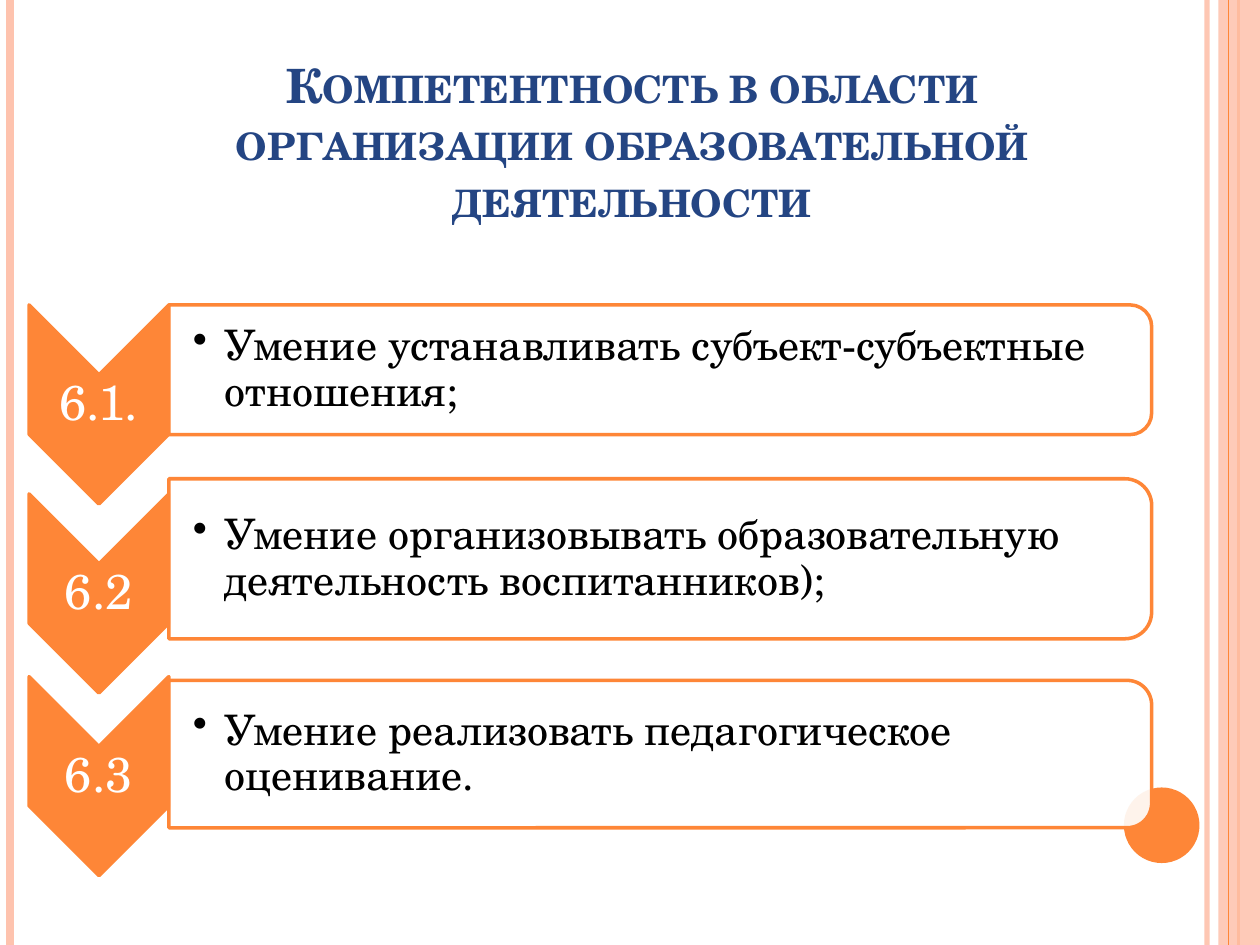
from dataclasses import dataclass

from lxml import etree
from pptx import Presentation
from pptx.dml.color import RGBColor
from pptx.enum.shapes import MSO_CONNECTOR as CONN, MSO_SHAPE as SHAPE
from pptx.enum.text import MSO_ANCHOR as ANCHOR, MSO_AUTO_SIZE as AUTO, PP_ALIGN as ALIGN
from pptx.oxml.ns import qn
from pptx.util import Inches, Pt


@dataclass(frozen=True)
class Theme:
    font: str = "TeX Gyre Schola"
    accent: str = "FE8637"
    pale: str = "FEC3AE"
    title: str = "244583"
    body: str = "000000"
    white: str = "FFFFFF"
    title_pt: int = 27
    label_pt: int = 28
    body_pt: int = 24
    border_pt: int = 2


THEME = Theme()


def set_alpha(fill, percent):
    """Make a solid fill partly transparent."""
    color = fill._xPr.find(qn("a:solidFill"))[0]
    etree.SubElement(color, qn("a:alpha"), val=str(percent * 1000))


def set_text(sp, text, size, color, bold=False, small_caps=False, bullet=False,
             align=ALIGN.CENTER, anchor=ANCHOR.MIDDLE, spacing=0.9, inset=0.02, left=0.02):
    tf = sp.text_frame
    tf.word_wrap, tf.auto_size, tf.vertical_anchor = True, AUTO.NONE, anchor
    tf.margin_left = Inches(left)
    tf.margin_right = tf.margin_top = tf.margin_bottom = Inches(inset)
    p = tf.paragraphs[0]
    p.alignment, p.line_spacing = align, spacing
    if bullet:
        pPr = p._p.get_or_add_pPr()
        pPr.set("marL", str(Inches(0.25)))
        pPr.set("indent", str(-Inches(0.25)))
        etree.SubElement(pPr, qn("a:buChar"), char="•")
    r = p.add_run()
    r.text = text
    r.font.name, r.font.size, r.font.bold = THEME.font, Pt(size), bold
    r.font.color.rgb = RGBColor.from_string(color)
    if small_caps:
        r._r.get_or_add_rPr().set("cap", "small")


def add_shape(slide, kind, x, y, w, h, fill, alpha=100, border=None, turned=False):
    """Place a shape in the visible box; a turned shape is rotated by 90 degrees."""
    if turned:
        x, y, w, h = x + (w - h) / 2, y + (h - w) / 2, h, w
    sp = slide.shapes.add_shape(kind, Inches(x), Inches(y), Inches(w), Inches(h))
    sp.rotation = 90 if turned else 0
    sp.shadow.inherit = False
    sp.fill.solid()
    sp.fill.fore_color.rgb = RGBColor.from_string(fill)
    if alpha < 100:
        set_alpha(sp.fill, alpha)
    if border:
        sp.line.color.rgb = RGBColor.from_string(border)
        sp.line.width = Pt(THEME.border_pt)
    else:
        sp.line.fill.background()
    return sp


def add_stripe(slide, x, height, color, width, alpha=100):
    line = slide.shapes.add_connector(CONN.STRAIGHT, Inches(x), 0, Inches(x), Inches(height))
    line.line.color.rgb = RGBColor.from_string(color)
    line.line.width = Pt(width)
    if alpha < 100:
        set_alpha(line.line.fill, alpha)
    etree.SubElement(line._element.spPr, qn("a:effectLst"))


def add_frame(slide, width, height):
    """Edge stripes, right band and corner disc."""
    add_stripe(slide, width - 0.42, height, THEME.pale, 3, alpha=93)
    add_stripe(slide, 0.08, height, THEME.pale, 4.5)
    add_stripe(slide, width - 0.17, height, THEME.accent, 1.5)
    add_shape(slide, SHAPE.RECTANGLE, width - 0.33, 0, 0.33, height, THEME.pale, alpha=87)
    add_stripe(slide, width - 0.25, height, THEME.accent, 0.75)
    add_shape(slide, SHAPE.OVAL, width - 1.08, height - 1.25, 0.6, 0.6, THEME.accent)


def add_title(slide, text, x, y, w, h):
    title = slide.shapes.title
    title.left, title.top, title.width, title.height = map(Inches, (x, y, w, h))
    set_text(title, text, THEME.title_pt, THEME.title, bold=True, small_caps=True,
             anchor=ANCHOR.BOTTOM, spacing=1.0, inset=0.05, left=0.1)


def add_text_box(slide, text, x, y, w, h, size, color, **fmt):
    box = slide.shapes.add_textbox(Inches(x), Inches(y), Inches(w), Inches(h))
    set_text(box, text, size, color, **fmt)


def add_chevron(slide, label, x, y, w=1.11, h=1.58):
    add_shape(slide, SHAPE.CHEVRON, x, y, w, h, THEME.accent, border=THEME.accent, turned=True)
    # The label sits between the notch and the point
    add_text_box(slide, label, x, y + w / 2, w, h - w, THEME.label_pt, THEME.white)


def add_panel(slide, text, x, y, w, h):
    add_shape(slide, SHAPE.ROUND_2_SAME_RECTANGLE, x, y, w, h, THEME.white,
              alpha=90, border=THEME.accent, turned=True)
    add_text_box(slide, text, x, y, w - 0.05, h, THEME.body_pt, THEME.body,
                 bullet=True, align=ALIGN.LEFT, left=0.19)


def add_list(slide, rows, x, y, w):
    """Rows hold label, text, chevron offset, panel offset and panel height."""
    chevron_w = 1.11
    for label, text, chevron_dy, panel_dy, panel_h in rows:
        add_chevron(slide, label, x, y + chevron_dy, chevron_w)
        add_panel(slide, text, x + chevron_w, y + panel_dy, w - chevron_w, panel_h)


def main():
    width, height = 10, 7.5
    prs = Presentation()
    prs.slide_width, prs.slide_height = Inches(width), Inches(height)
    slide = prs.slides.add_slide(prs.slide_layouts[5])

    add_frame(slide, width, height)
    add_title(slide, "Компетентность в области организации образовательной деятельности",
              0.91, 0.6, 8.17, 1.25)
    rows = [
        ("6.1.", "Умение устанавливать субъект-субъектные отношения;", 0, 0, 1.03),
        ("6.2", "Умение организовывать образовательную деятельность воспитанников);",
         1.5, 1.38, 1.27),
        ("6.3", "Умение реализовать педагогическое оценивание.", 2.95, 2.98, 1.17),
    ]
    add_list(slide, rows, 0.23, 2.42, 8.91)
    prs.save("out.pptx")


if __name__ == "__main__":
    main()
